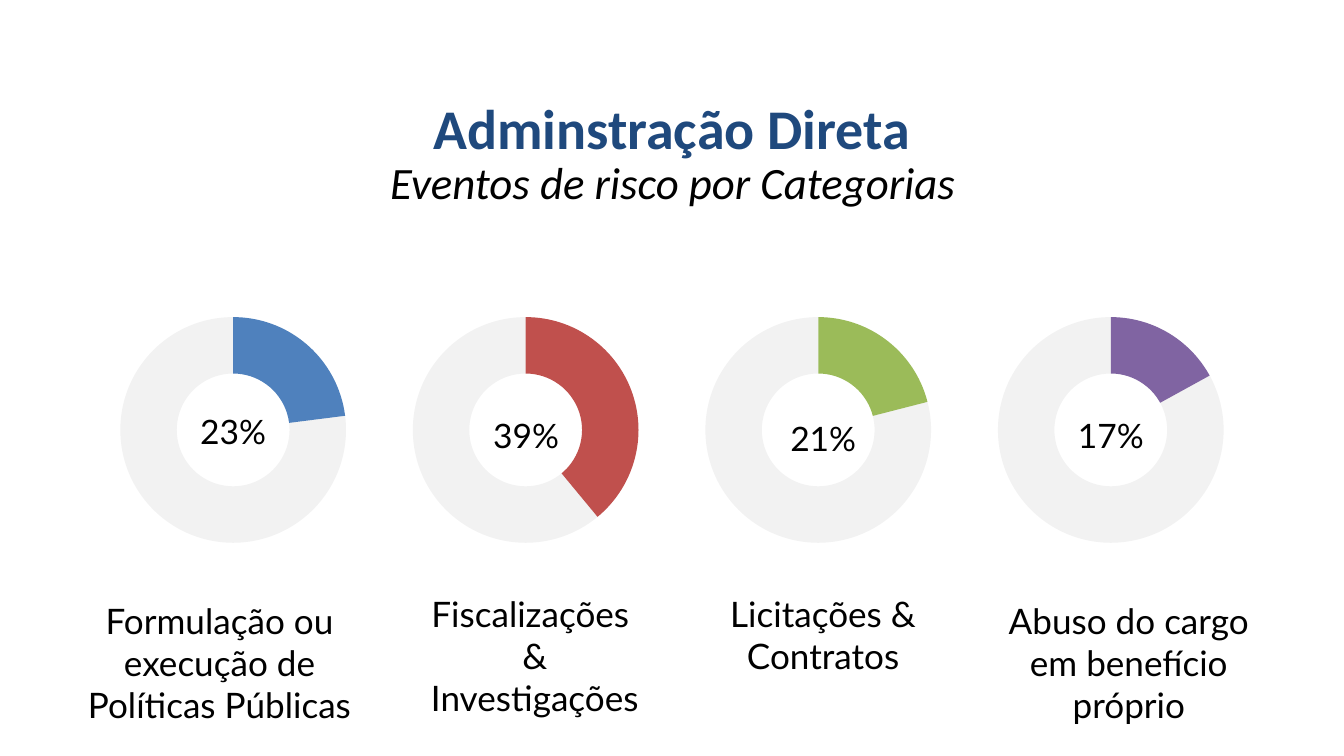
from dataclasses import dataclass

from lxml import etree
from pptx import Presentation
from pptx.chart.data import CategoryChartData
from pptx.dml.color import RGBColor
from pptx.enum.chart import XL_CHART_TYPE
from pptx.enum.text import MSO_AUTO_SIZE, PP_ALIGN
from pptx.oxml import parse_xml
from pptx.oxml.ns import nsdecls, qn
from pptx.util import Inches, Pt

DOUGHNUT = XL_CHART_TYPE.DOUGHNUT
CENTER = PP_ALIGN.CENTER
GROW = MSO_AUTO_SIZE.SHAPE_TO_FIT_TEXT


@dataclass(frozen=True)
class Theme:
    title_color: str = "1F497D"
    text_color: str = "000000"
    remainder_color: str = "808080"
    remainder_opacity: int = 10
    heading_font: str = "Calibri"
    label_font: str = "Lato"
    title_size: float = 30
    subtitle_size: float = 24
    label_size: float = 18.8
    percent_size: float = 18
    chart_size: float = 10


FIRST_LEFT, LAST_LEFT, CHART_TOP = 0.69, 7.22, 2.22
CHART_WIDTH, CHART_HEIGHT, RING_DIAMETER = 2.09, 1.96, 1.68
PERCENT_WIDTH, PERCENT_HEIGHT = 1.71, 0.4

# Percentage, ring colour, percentage position, label paragraphs, label box
CATEGORIES = [
    (23, "4F81BD", (0.88, 3.01),
     ["Formulação ou execução de Políticas Públicas"], (0.45, 4.41, 2.37, 1.05)),
    (39, "C0504D", (3.06, 3.04),
     ["Fiscalizações ", "& Investigações"], (3.02, 4.36, 1.92, 0.73)),
    (21, "9BBB59", (5.27, 3.06),
     ["Licitações & Contratos"], (5.27, 4.36, 1.71, 0.73)),
    (17, "8064A2", (7.41, 3.04),
     ["Abuso do cargo em benefício próprio"], (7.31, 4.41, 2.18, 1.05)),
]
CHART_PITCH = (LAST_LEFT - FIRST_LEFT) / (len(CATEGORIES) - 1)


def format_font(font, name, size, color, bold=False, italic=False):
    font.name = name
    font.size = Pt(size)
    font.bold = bold
    font.italic = italic
    font.color.rgb = RGBColor.from_string(color)


class SlideBuilder:
    def __init__(self, slide, theme):
        self.slide = slide
        self.theme = theme

    def text(self, paragraphs, box, wrap=True, **font_format):
        shape = self.slide.shapes.add_textbox(*map(Inches, box))
        frame = shape.text_frame
        frame.word_wrap = wrap
        frame.auto_size = GROW
        for index, content in enumerate(paragraphs):
            paragraph = frame.paragraphs[0] if index == 0 else frame.add_paragraph()
            paragraph.alignment = CENTER
            run = paragraph.add_run()
            run.text = content
            format_font(run.font, **font_format)

    def ring(self, percent, color, box):
        """Draw a doughnut whose coloured part is the given percentage."""
        theme = self.theme
        data = CategoryChartData()
        data.categories = ["1", "2"]
        data.add_series("Series 1", [percent, 100 - percent, None])
        chart = self.slide.shapes.add_chart(DOUGHNUT, *map(Inches, box), data).chart
        chart.has_legend = False
        chart.has_title = False
        format_font(chart.font, theme.heading_font, theme.chart_size, theme.text_color)
        plot = chart.plots[0]
        plot.vary_by_categories = False
        plot.has_data_labels = False
        for index, fill_color in enumerate([color, theme.remainder_color]):
            point_format = plot.series[0].points[index].format
            point_format.fill.solid()
            point_format.fill.fore_color.rgb = RGBColor.from_string(fill_color)
            point_format.line.fill.background()
        remainder = chart.element.xpath('.//c:dPt[c:idx/@val="1"]//a:srgbClr')[0]
        alpha = etree.SubElement(remainder, qn("a:alpha"))
        alpha.set("val", str(theme.remainder_opacity * 1000))
        chart.element.xpath(".//c:holeSize")[0].set("val", "80")
        self.center_ring(chart)

    def center_ring(self, chart):
        """Fix the plot area to a centred square of the ring's diameter."""
        width = RING_DIAMETER / CHART_WIDTH
        height = RING_DIAMETER / CHART_HEIGHT
        places = {"x": (1 - width) / 2, "y": (1 - height) / 2, "w": width, "h": height}
        values = "".join(f'<c:{key} val="{value:.4f}"/>' for key, value in places.items())
        layout = parse_xml(
            f'<c:layout {nsdecls("c")}><c:manualLayout><c:layoutTarget val="inner"/>'
            f'<c:xMode val="edge"/><c:yMode val="edge"/>{values}'
            "</c:manualLayout></c:layout>"
        )
        plot_area = chart.element.xpath(".//c:plotArea")[0]
        for automatic in plot_area.xpath("./c:layout"):
            plot_area.remove(automatic)
        plot_area.insert(0, layout)


def main():
    presentation = Presentation()
    presentation.slide_width = Inches(10)
    presentation.slide_height = Inches(10 * 9 / 16)
    theme = Theme()
    builder = SlideBuilder(
        presentation.slides.add_slide(presentation.slide_layouts[6]), theme)

    for index, (percent, color, *_) in enumerate(CATEGORIES):
        left = FIRST_LEFT + index * CHART_PITCH
        builder.ring(percent, color, (left, CHART_TOP, CHART_WIDTH, CHART_HEIGHT))
    for _, _, _, label, label_box in CATEGORIES:
        builder.text(label, label_box, name=theme.label_font,
                     size=theme.label_size, color=theme.text_color)
    for percent, _, position, *_ in CATEGORIES:
        builder.text([f"{percent}%"], (*position, PERCENT_WIDTH, PERCENT_HEIGHT),
                     name=theme.label_font, size=theme.percent_size,
                     color=theme.text_color)

    builder.text(["Adminstração Direta"], (3.11, 0.65, 3.78, 0.61), wrap=False,
                 name=theme.heading_font, size=theme.title_size,
                 color=theme.title_color, bold=True)
    builder.text(["Eventos de risco por Categorias"], (1.1, 1.1, 7.81, 0.5),
                 name=theme.heading_font, size=theme.subtitle_size,
                 color=theme.text_color, italic=True)
    presentation.save("out.pptx")


if __name__ == "__main__":
    main()
